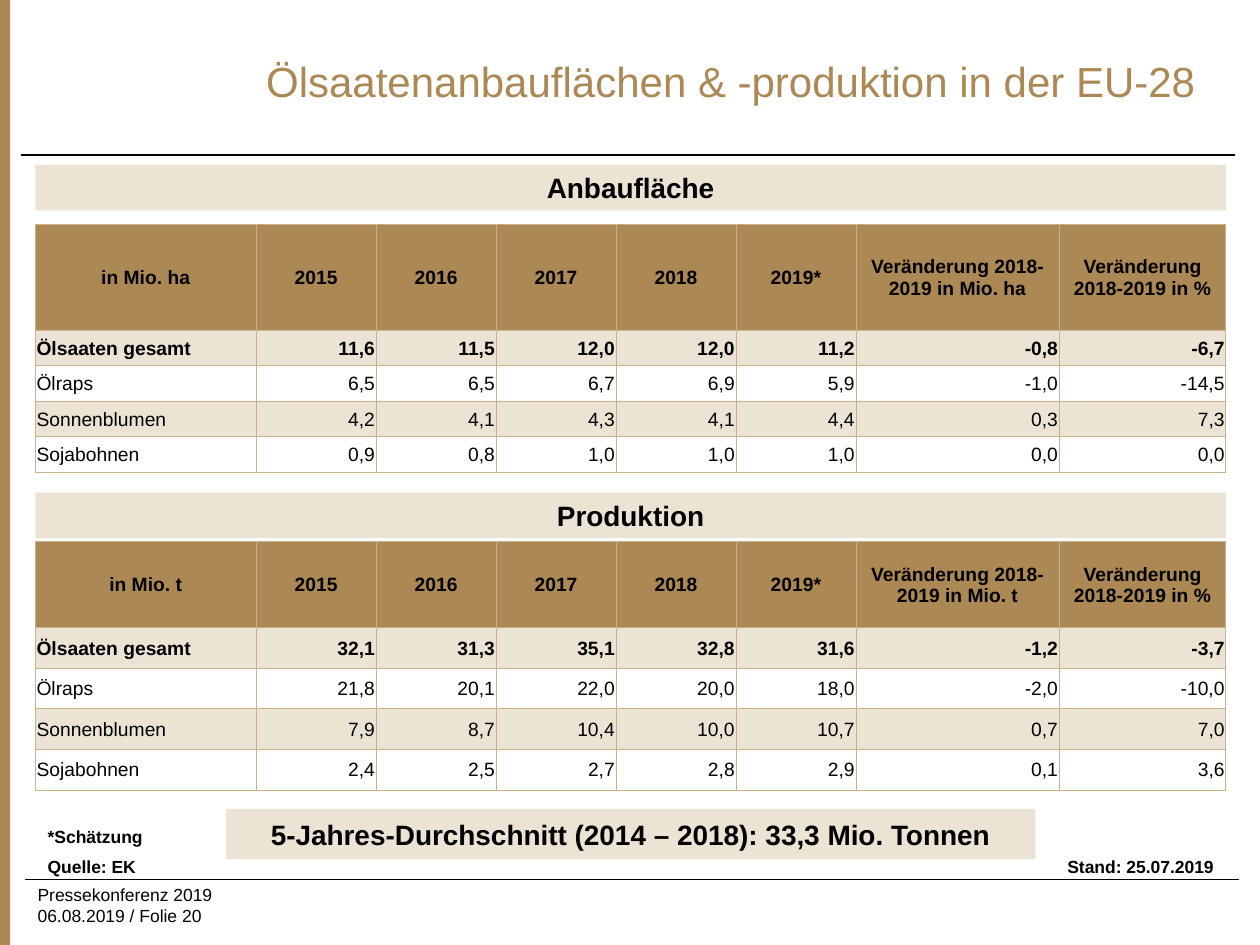
import pptx
import pptx.dml.color
import pptx.enum.shapes
import pptx.enum.text
import pptx.oxml
import pptx.oxml.ns
import pptx.util

RGB = pptx.dml.color.RGBColor
GOLD = RGB(0xAC, 0x88, 0x54)
SAND = RGB(0xEB, 0xE4, 0xD5)
BORDER = RGB(0xC8, 0xB1, 0x8E)
BLACK = RGB(0, 0, 0)

LEFT, CENTER, RIGHT = (pptx.enum.text.PP_ALIGN.LEFT, pptx.enum.text.PP_ALIGN.CENTER,
                       pptx.enum.text.PP_ALIGN.RIGHT)
TOP, MIDDLE = pptx.enum.text.MSO_ANCHOR.TOP, pptx.enum.text.MSO_ANCHOR.MIDDLE

# Grid of 100 columns by 75 rows; boxes are (column, row, columns, rows)
SLIDE_W, SLIDE_H = pptx.util.Inches(10), pptx.util.Inches(7.5)
UNIT = SLIDE_W / 100

YEARS = ["2015", "2016", "2017", "2018", "2019*"]
COLUMNS = [17.5] + [9.5] * len(YEARS) + [16.1, 13.2]
TABLE_ROWS = 19.7
BANNER_ROWS = 3.6

AREA = [
    ["Ölsaaten gesamt", "11,6", "11,5", "12,0", "12,0", "11,2", "-0,8", "-6,7"],
    ["Ölraps", "6,5", "6,5", "6,7", "6,9", "5,9", "-1,0", "-14,5"],
    ["Sonnenblumen", "4,2", "4,1", "4,3", "4,1", "4,4", "0,3", "7,3"],
    ["Sojabohnen", "0,9", "0,8", "1,0", "1,0", "1,0", "0,0", "0,0"],
]
PRODUCTION = [
    ["Ölsaaten gesamt", "32,1", "31,3", "35,1", "32,8", "31,6", "-1,2", "-3,7"],
    ["Ölraps", "21,8", "20,1", "22,0", "20,0", "18,0", "-2,0", "-10,0"],
    ["Sonnenblumen", "7,9", "8,7", "10,4", "10,0", "10,7", "0,7", "7,0"],
    ["Sojabohnen", "2,4", "2,5", "2,7", "2,8", "2,9", "0,1", "3,6"],
]


def grid(*cells):
    return [round(cell * UNIT) for cell in cells]


def write(frame, text, size=10, bold=False, color=BLACK, align=LEFT):
    paragraph = frame.paragraphs[0]
    paragraph.text = text
    paragraph.alignment = align
    font = paragraph.font
    font.name, font.size, font.bold = "Arial", pptx.util.Pt(size), bold
    font.color.rgb = color


def add_text(slide, box, text, anchor=TOP, **style):
    frame = slide.shapes.add_textbox(*grid(*box)).text_frame
    frame.word_wrap = True
    frame.vertical_anchor = anchor
    write(frame, text, **style)


def add_bar(slide, box, color):
    bar = slide.shapes.add_shape(pptx.enum.shapes.MSO_SHAPE.RECTANGLE, *grid(*box))
    bar.shadow.inherit = False
    bar.fill.solid()
    bar.fill.fore_color.rgb = color
    bar.line.fill.background()
    return bar


def add_banner(slide, box, text):
    frame = add_bar(slide, box, SAND).text_frame
    frame.word_wrap = False
    frame.vertical_anchor = MIDDLE
    write(frame, text, size=16, bold=True, align=CENTER)


def add_rule(slide, column, row, columns):
    rule = slide.shapes.add_connector(pptx.enum.shapes.MSO_CONNECTOR.STRAIGHT,
                                      *grid(column, row, column + columns, row))
    rule.line.color.rgb = BLACK
    rule.line.width = pptx.util.Pt(0.75)
    properties = rule._element.spPr
    properties.append(properties.makeelement(pptx.oxml.ns.qn("a:effectLst"), {}))


def outline(cell):
    properties = cell._tc.get_or_add_tcPr()
    for position, side in enumerate(("lnL", "lnR", "lnT", "lnB")):
        properties.insert(position, pptx.oxml.parse_xml(
            f'<a:{side} {pptx.oxml.ns.nsdecls("a")} w="{pptx.util.Pt(0.5)}">'
            f'<a:solidFill><a:srgbClr val="{BORDER}"/></a:solidFill></a:{side}>'))


def fill_cell(cell, text, row, column):
    cell.vertical_anchor = MIDDLE
    cell.margin_left = cell.margin_right = cell.margin_top = pptx.util.Inches(0.01)
    cell.margin_bottom = 0
    if row == 0:
        align = CENTER
    else:
        align = LEFT if column == 0 else RIGHT
    write(cell.text_frame, text, size=11, bold=row < 2, align=align)
    # Header is gold, then sand and clear rows take turns
    if row == 0 or row % 2:
        cell.fill.solid()
        cell.fill.fore_color.rgb = SAND if row else GOLD
    else:
        cell.fill.background()
    outline(cell)


def add_section(slide, box, heading, unit, figures, header_rows):
    """Banner at the top of the box, table at its bottom."""
    left, top, width, height = box
    add_banner(slide, (left, top, width, BANNER_ROWS), heading)

    header = [f"in {unit}", *YEARS, f"Veränderung 2018-2019 in {unit}",
              "Veränderung 2018-2019 in %"]
    lines = [header, *figures]
    table = slide.shapes.add_table(
        len(lines), len(COLUMNS),
        *grid(left, top + height - TABLE_ROWS, width, TABLE_ROWS)).table
    table.first_row = table.horz_banding = False
    for column, share in zip(table.columns, COLUMNS):
        column.width = round(width * share / sum(COLUMNS) * UNIT)
    body_rows = (TABLE_ROWS - header_rows) / len(figures)
    for r, line in enumerate(lines):
        table.rows[r].height = round((body_rows if r else header_rows) * UNIT)
        for c, text in enumerate(line):
            fill_cell(table.cell(r, c), text, r, c)


def add_header(slide, box):
    left, top, width, height = box
    add_bar(slide, (-0.1, 0, 0.9, 75), GOLD)
    add_rule(slide, left, top + height, width)
    add_text(slide, (left + 16.8, top + 1.3, 79, 10.2),
             "Ölsaatenanbauflächen & -produktion in der EU-28",
             anchor=MIDDLE, size=24, color=GOLD, align=CENTER)


def add_notes(slide, box):
    left, top, width, height = box
    line = height / 2
    add_text(slide, (left, top, width, line), "*Schätzung", bold=True)
    for text, align in (("Quelle: EK", LEFT), ("Stand: 25.07.2019", RIGHT)):
        add_text(slide, (left, top + line, width, line), text, bold=True, align=align)
    add_banner(slide, (left + 0.16 * width, top - 0.9, 0.68 * width, 4),
               "5-Jahres-Durchschnitt (2014 – 2018): 33,3 Mio. Tonnen")


def add_footer(slide, box):
    left, top, width, height = box
    add_rule(slide, left, top, width)
    add_text(slide, (left, top - 0.1, 33.1, height),
             "Pressekonferenz 2019\n06.08.2019 / Folie 20")


def main():
    deck = pptx.Presentation()
    deck.slide_width, deck.slide_height = SLIDE_W, SLIDE_H
    slide = deck.slides.add_slide(deck.slide_layouts[6])

    add_header(slide, (1.7, 0, 96.3, 12.3))
    add_section(slide, (2.8, 13.1, 94.5, 24.4), "Anbaufläche", "Mio. ha", AREA, 8.4)
    add_section(slide, (2.8, 39.1, 94.5, 23.6), "Produktion", "Mio. t", PRODUCTION, 6.8)
    add_notes(slide, (2.8, 65.1, 94.5, 4.7))
    add_footer(slide, (2, 69.8, 96.3, 4))

    deck.save("out.pptx")


if __name__ == "__main__":
    main()
